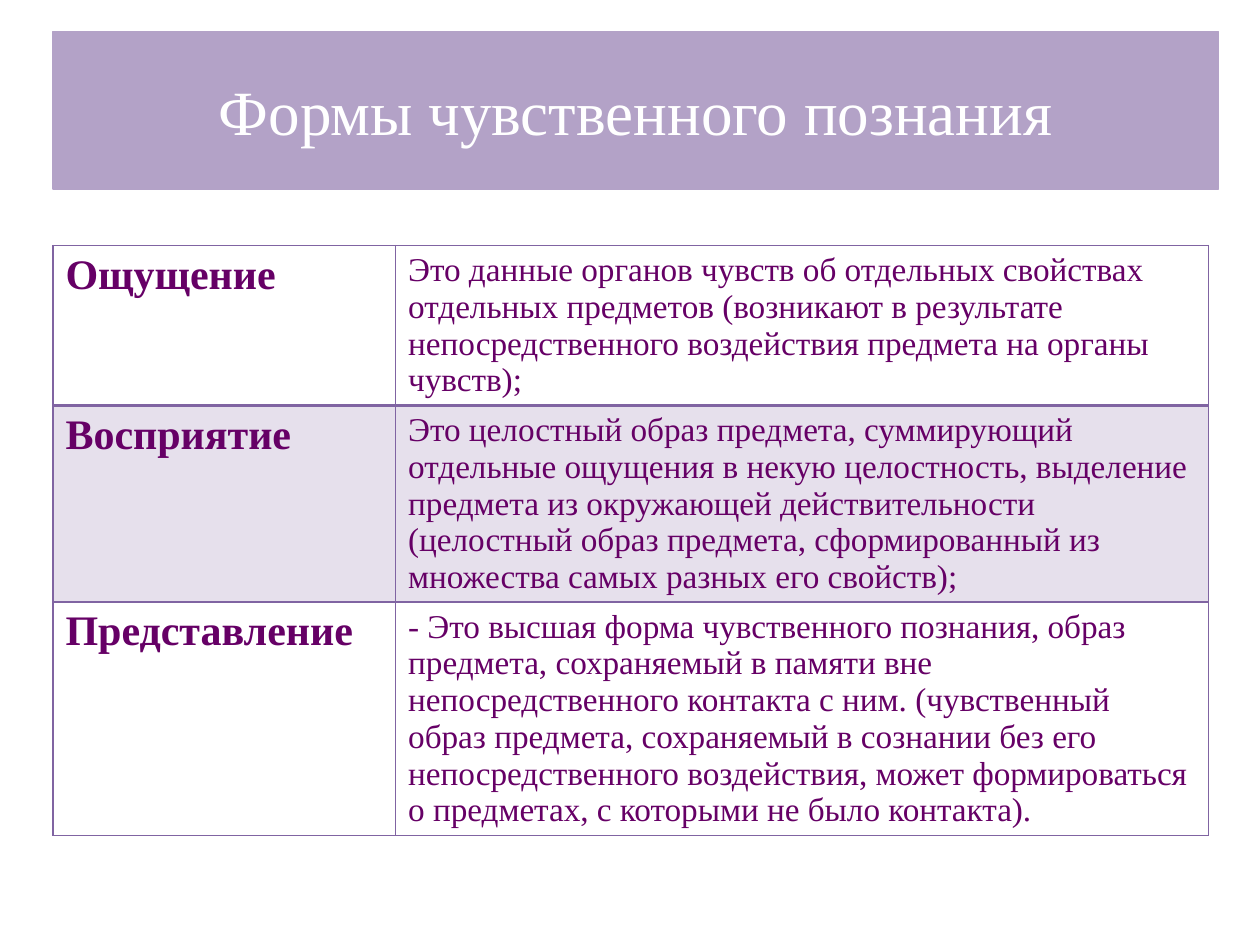
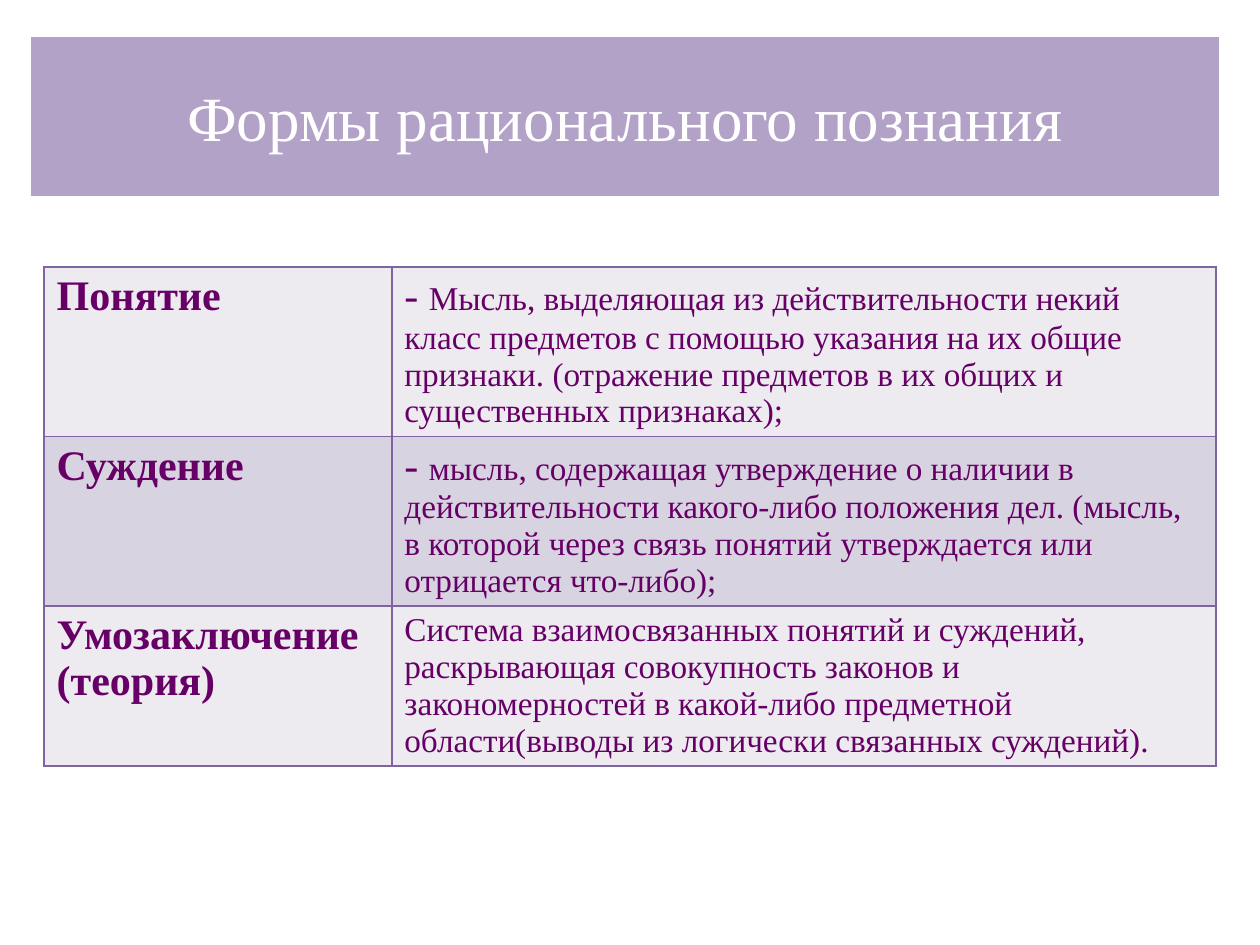
from lxml.etree import SubElement
from pptx import Presentation
from pptx.dml.color import RGBColor
from pptx.enum.text import MSO_ANCHOR, PP_ALIGN
from pptx.oxml.ns import qn
from pptx.util import Inches, Pt

FONT = "Times New Roman"
COLORS = {
    "band": "B3A2C7",
    "title": "FFFFFF",
    "text": "660066",
    "border": "8064A2",
    "lilac": "E6E0EC",
    "pale": "EDEAF0",
    "grey": "D8D3E0",
}
TITLE_SIZE, TERM_SIZE, MEANING_SIZE = 36, 24, 19
DASH = ("- ", TERM_SIZE)

SLIDES = [
    {
        "title": "Формы чувственного познания",
        "band": (0.42, 0.25, 9.25, 1.25),
        "origin": (0.42, 1.95),
        "columns": (2.72, 6.45),
        "heights": (1.27, 1.56, 1.85),
        "fills": (None, "lilac", None),
        "rules": (1, 2, 1, 1),
        "forms": [
            ("Ощущение", [(
                "Это данные органов чувств об отдельных свойствах отдельных предметов "
                "(возникают в результате непосредственного воздействия предмета на органы "
                "чувств);", MEANING_SIZE)]),
            ("Восприятие", [(
                "Это целостный образ предмета, суммирующий отдельные ощущения в некую "
                "целостность, выделение предмета из окружающей действительности "
                "(целостный образ предмета, сформированный из множества самых разных "
                "его свойств);", MEANING_SIZE)]),
            ("Представление", [(
                "- Это высшая форма чувственного познания, образ предмета, сохраняемый "
                "в памяти вне непосредственного контакта с ним. (чувственный образ "
                "предмета, сохраняемый в сознании без его непосредственного воздействия, "
                "может формироваться о предметах, с которыми не было контакта).",
                MEANING_SIZE)]),
        ],
    },
    {
        "title": "Формы рационального познания",
        "band": (0.25, 0.3, 9.42, 1.25),
        "origin": (0.35, 2.12),
        "columns": (2.76, 6.54),
        "heights": (1.34, 1.34, 1.27),
        "fills": ("pale", "grey", "pale"),
        "rules": (1, 1, 1, 1),
        "forms": [
            ("Понятие", [DASH, (
                "Мысль, выделяющая из действительности некий класс предметов с помощью "
                "указания на их общие признаки. (отражение предметов в их общих и "
                "существенных признаках);", MEANING_SIZE)]),
            ("Суждение", [DASH, (
                "мысль, содержащая утверждение о наличии в действительности какого-либо "
                "положения дел. (мысль, в которой через связь понятий утверждается или "
                "отрицается что-либо);", MEANING_SIZE)]),
            ("Умозаключение (теория)", [(
                "Система взаимосвязанных понятий и суждений, раскрывающая совокупность "
                "законов и закономерностей в какой-либо предметной области(выводы из "
                "логически связанных суждений).", MEANING_SIZE)]),
        ],
    },
]


def rgb(name):
    return RGBColor.from_string(COLORS[name])


def add_run(paragraph, text, size, color, bold=False):
    run = paragraph.add_run()
    run.text = text
    run.font.name = FONT
    run.font.size = Pt(size)
    run.font.bold = bold
    run.font.color.rgb = rgb(color)


def add_title(slide, content):
    title = slide.shapes.title
    title.left, title.top, title.width, title.height = map(Inches, content["band"])
    title.fill.solid()
    title.fill.fore_color.rgb = rgb("band")
    title.line.color.rgb = rgb("band")
    title.line.width = Pt(0.75)
    title.text_frame.vertical_anchor = MSO_ANCHOR.MIDDLE
    heading = title.text_frame.paragraphs[0]
    heading.alignment = PP_ALIGN.CENTER
    add_run(heading, content["title"], TITLE_SIZE, "title")


def set_borders(cell, top, bottom):
    properties = cell._tc.get_or_add_tcPr()
    for side, width in (("L", 1), ("R", 1), ("T", top), ("B", bottom)):
        border = SubElement(properties, qn(f"a:ln{side}"), w=str(Pt(width)))
        fill = SubElement(border, qn("a:solidFill"))
        SubElement(fill, qn("a:srgbClr"), val=COLORS["border"])


def set_fill(cell, color):
    if color is None:
        cell.fill.background()
    else:
        cell.fill.solid()
        cell.fill.fore_color.rgb = rgb(color)


def add_forms_table(slide, content):
    forms, columns, heights = content["forms"], content["columns"], content["heights"]
    left, top = content["origin"]
    table = slide.shapes.add_table(
        len(forms), len(columns), Inches(left), Inches(top),
        Inches(sum(columns)), Inches(sum(heights))).table
    table.first_row = table.horz_banding = False
    for column, width in zip(table.columns, columns):
        column.width = Inches(width)
    for index, (term, meaning) in enumerate(forms):
        row = table.rows[index]
        row.height = Inches(heights[index])
        for cell in row.cells:
            set_borders(cell, *content["rules"][index:index + 2])
            set_fill(cell, content["fills"][index])
        term_cell, meaning_cell = row.cells
        add_run(term_cell.text_frame.paragraphs[0], term, TERM_SIZE, "text", bold=True)
        for text, size in meaning:
            add_run(meaning_cell.text_frame.paragraphs[0], text, size, "text")


def main():
    deck = Presentation()
    deck.slide_width, deck.slide_height = Inches(10), Inches(7.5)
    title_only = deck.slide_layouts.get_by_name("Title Only")
    for content in SLIDES:
        slide = deck.slides.add_slide(title_only)
        add_title(slide, content)
        add_forms_table(slide, content)
    deck.save("out.pptx")


if __name__ == "__main__":
    main()
